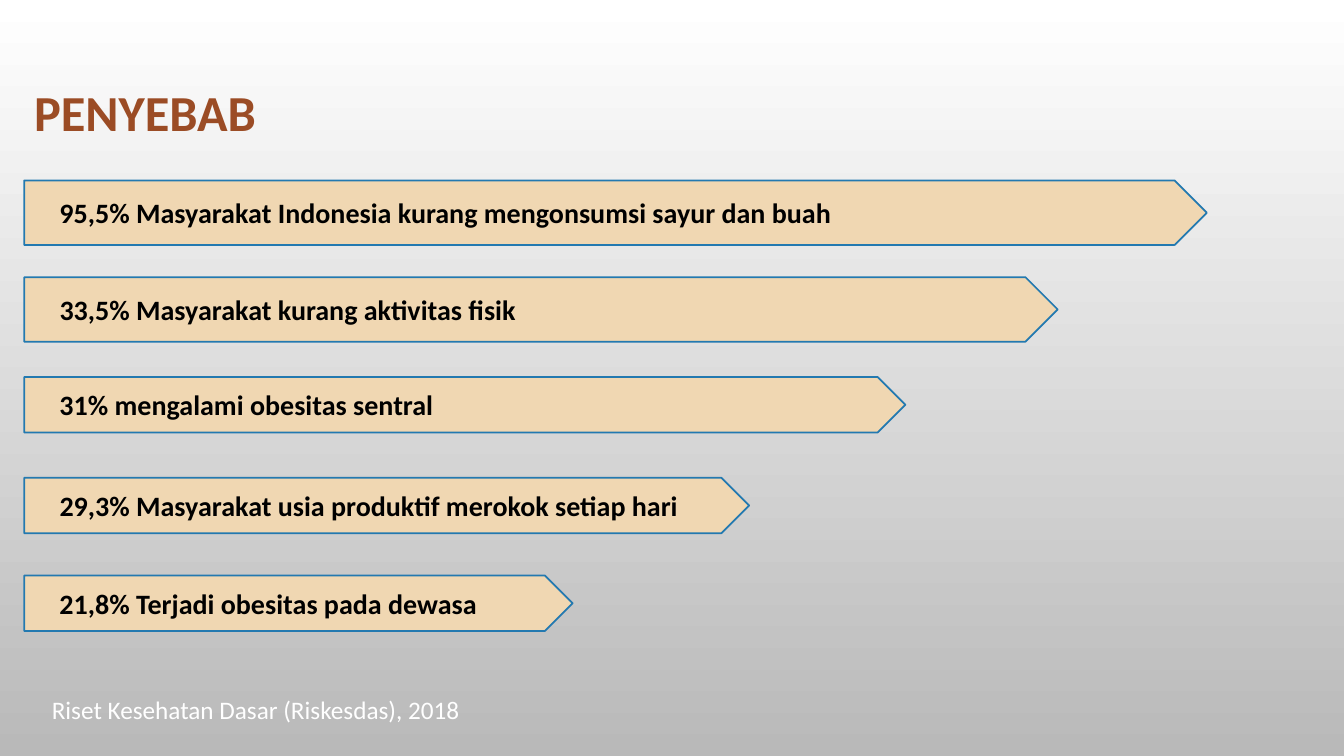
from pptx import Presentation, util as u
from pptx.dml.color import RGBColor
from pptx.enum import shapes, text

TITLE = "PENYEBAB"
SOURCE = "Riset Kesehatan Dasar (Riskesdas), 2018"
CAUSES = [
    ("95,5% Masyarakat Indonesia kurang mengonsumsi sayur dan buah", 1.79, 11.73, 0.64),
    ("33,5% Masyarakat kurang aktivitas fisik", 2.75, 10.25, 0.64),
    ("31% mengalami obesitas sentral", 3.74, 8.74, 0.55),
    ("29,3% Masyarakat usia produktif merokok setiap hari", 4.74, 7.19, 0.55),
    ("21,8% Terjadi obesitas pada dewasa", 5.71, 5.44, 0.55),
]
THEME = {
    "font": "Calibri",
    "background": ("FFFFFF", "B9B9B9"),
    "arrow": "F0D7B2",
    "outline": "2379B0",
    "outline_width": 1.25,
    "title": {"size": 36, "color": "9B4C25", "bold": True},
    "cause": {"size": 20, "color": "000000", "bold": True},
    "source": {"size": 18, "color": "FFFFFF", "bold": False},
}
LEFT = 0.24
MARGIN = 0.1
CAUSE_MARGIN = 0.35


def rgb(value):
    return RGBColor.from_string(value)


def write(sp, content, style, align=text.PP_ALIGN.LEFT, margin=MARGIN, spacing=1.0):
    tf = sp.text_frame
    frame = {
        "word_wrap": True,
        "vertical_anchor": text.MSO_ANCHOR.MIDDLE,
        "margin_left": u.Inches(margin),
        "margin_right": u.Inches(MARGIN),
    }
    for name, value in frame.items():
        setattr(tf, name, value)
    p = tf.paragraphs[0]
    p.alignment = align
    p.line_spacing = spacing
    r = p.add_run()
    r.text = content
    fmt = THEME[style]
    font = {"name": THEME["font"], "size": u.Pt(fmt["size"]), "bold": fmt["bold"]}
    for name, value in font.items():
        setattr(r.font, name, value)
    r.font.color.rgb = rgb(fmt["color"])


def add_shape(s, kind, top, width, height):
    box = [u.Inches(v) for v in (LEFT, top, width, height)]
    sp = s.shapes.add_shape(kind, *box)
    sp.shadow.inherit = False
    return sp


def main():
    prs = Presentation()
    prs.slide_width, prs.slide_height = u.Inches(13.33), u.Inches(7.5)
    s = prs.slides.add_slide(prs.slide_layouts[6])

    fill = s.background.fill
    fill.gradient()
    fill.gradient_angle = 270
    for position, (stop, color) in enumerate(zip(fill.gradient_stops, THEME["background"])):
        stop.position = position
        stop.color.rgb = rgb(color)

    title = s.shapes.add_textbox(*[u.Inches(v) for v in (LEFT, 0.82, 12.77, 0.64)])
    write(title, TITLE, "title", spacing=0.9)

    source = add_shape(s, shapes.MSO_SHAPE.FLOWCHART_PROCESS, 6.82, 4.59, 0.43)
    source.fill.background()
    source.line.fill.background()
    write(source, SOURCE, "source", align=text.PP_ALIGN.CENTER)

    for cause, top, width, height in CAUSES:
        arrow = add_shape(s, shapes.MSO_SHAPE.PENTAGON, top, width, height)
        arrow.fill.solid()
        arrow.fill.fore_color.rgb = rgb(THEME["arrow"])
        arrow.line.color.rgb = rgb(THEME["outline"])
        arrow.line.width = u.Pt(THEME["outline_width"])
        write(arrow, cause, "cause", margin=CAUSE_MARGIN)

    prs.save("out.pptx")


if __name__ == "__main__":
    main()
